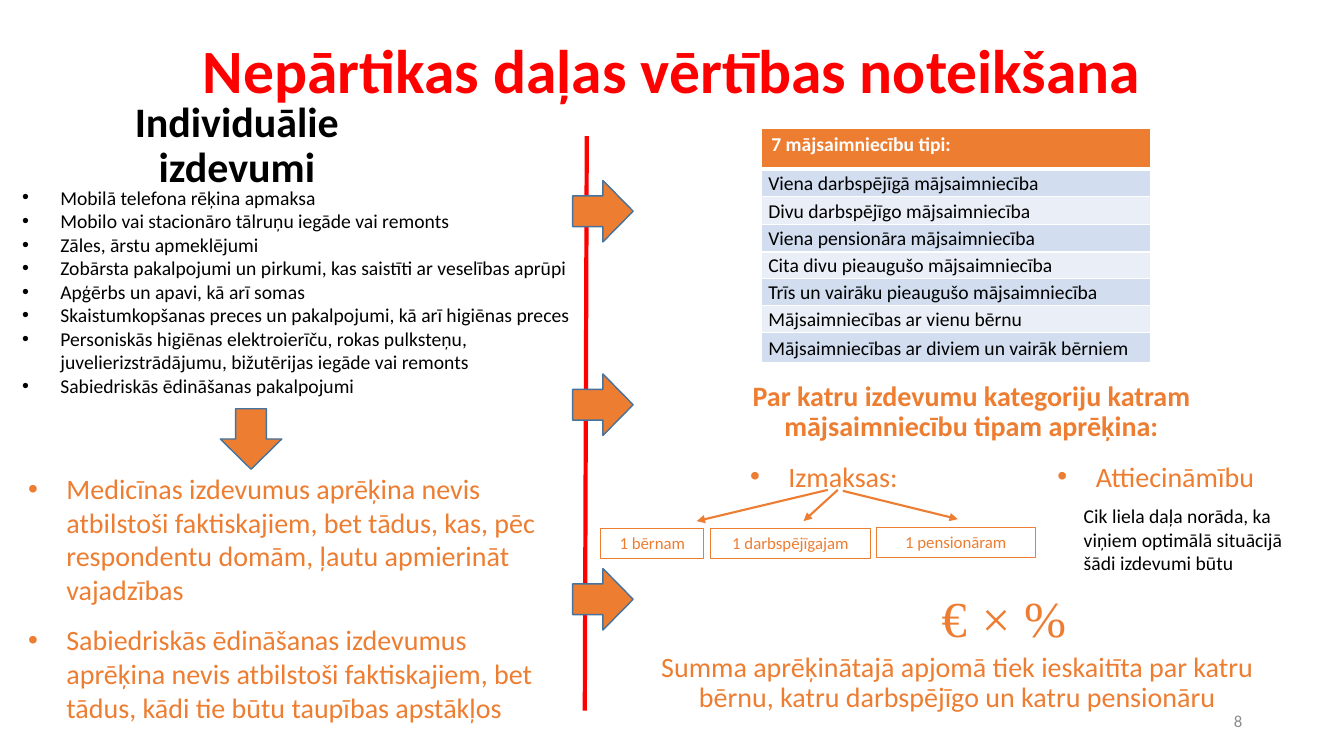
from pptx import Presentation
from pptx.dml.color import RGBColor as RGB
from pptx.enum.shapes import MSO_CONNECTOR as CONN, MSO_SHAPE as SHAPE
from pptx.enum.text import MSO_ANCHOR as ANCHOR, PP_ALIGN as ALIGN
from pptx.oxml.ns import qn
from pptx.util import Pt
from lxml.etree import SubElement as Sub

PX = 9144
HUES = {
    "red": "FF0000", "black": "000000", "white": "FFFFFF", "gray": "8C8C8C",
    "orange": "ED7D31", "edge": "43739E", "dark": "D2DEEF", "light": "EAEFF7",
}
COSTS = [
    "Mobilā telefona rēķina apmaksa",
    "Mobilo vai stacionāro tālruņu iegāde vai remonts",
    "Zāles, ārstu apmeklējumi",
    "Zobārsta pakalpojumi un pirkumi, kas saistīti ar veselības aprūpi",
    "Apģērbs un apavi, kā arī somas",
    "Skaistumkopšanas preces un pakalpojumi, kā arī higiēnas preces",
    "Personiskās higiēnas elektroierīču, rokas pulksteņu, "
    "juvelierizstrādājumu, bižutērijas iegāde vai remonts",
    "Sabiedriskās ēdināšanas pakalpojumi",
]
RULES = [
    "Medicīnas izdevumus aprēķina nevis atbilstoši faktiskajiem, bet tādus, "
    "kas, pēc respondentu domām, ļautu apmierināt vajadzības",
    "Sabiedriskās ēdināšanas izdevumus aprēķina nevis atbilstoši faktiskajiem, "
    "bet tādus, kādi tie būtu taupības apstākļos",
]
TYPES = [
    ("7 mājsaimniecību tipi:", 41),
    ("Viena darbspējīgā mājsaimniecība", 27),
    ("Divu darbspējīgo mājsaimniecība", 28),
    ("Viena pensionāra mājsaimniecība", 27),
    ("Cita divu pieaugušo mājsaimniecība", 26),
    ("Trīs un vairāku pieaugušo mājsaimniecība", 27),
    ("Mājsaimniecības ar vienu bērnu", 27),
    ("Mājsaimniecības ar diviem un vairāk bērniem", 30),
]


def emu(*spans):
    """Turn px lengths into EMU."""
    return [span * PX for span in spans]


def hue(name):
    """Look up a colour by name."""
    return RGB.from_string(HUES[name])


def style(para, size, tint, bold=False, face="Calibri"):
    """Format the runs of a paragraph."""
    for run in para.runs:
        font = run.font
        font.size, font.bold, font.name = Pt(size), bold, face
        font.color.rgb = hue(tint)


def text(slide, box, words, size, tint, bold=False, face="Calibri"):
    """Add a wrapped text box and return its frame."""
    frame = slide.shapes.add_textbox(*emu(*box)).text_frame
    frame.word_wrap = True
    frame.text = words
    for para in frame.paragraphs:
        style(para, size, tint, bold, face)
    return frame


def head(slide, box, words, size, tint, bold=True):
    """Add a centred heading with tight lines."""
    frame = text(slide, box, words, size, tint, bold)
    frame.vertical_anchor = ANCHOR.MIDDLE
    para = frame.paragraphs[0]
    para.alignment, para.line_spacing = ALIGN.CENTER, 0.9


def bullets(slide, box, items, size, tint, gap=0):
    """Add a bulleted list."""
    frame = text(slide, box, "\n".join(items), size, tint)
    for row, para in enumerate(frame.paragraphs):
        para.space_before = Pt(gap if row else 0)
        props = para._p.get_or_add_pPr()
        props.set("marL", str(38 * PX))
        props.set("indent", str(-38 * PX))
        Sub(props, qn("a:buFont"), typeface="Arial")
        Sub(props, qn("a:buChar"), char="•")


def shape(slide, kind, box, edge, width):
    """Add an unfilled outlined shape without shadow."""
    item = slide.shapes.add_shape(kind, *emu(*box))
    item.shadow.inherit = False
    item.fill.background()
    item.line.color.rgb = hue(edge)
    item.line.width = Pt(width)
    return item


def arrow(slide, left, top, turn):
    """Add a turned block arrow."""
    item = shape(slide, SHAPE.LEFT_ARROW, (left, top, 60, 61), "edge", 1)
    item.fill.solid()
    item.fill.fore_color.rgb = hue("orange")
    item.rotation = turn


def label(slide, box, words):
    """Add an outlined label."""
    frame = shape(slide, SHAPE.RECTANGLE, box, "orange", 0.75).text_frame
    frame.word_wrap = True
    frame.text = words
    frame.paragraphs[0].alignment = ALIGN.CENTER
    style(frame.paragraphs[0], 12, "orange")


def line(slide, ends, tint, width, tip=False):
    """Add a straight line, with an arrowhead if asked."""
    item = slide.shapes.add_connector(CONN.STRAIGHT, *emu(*ends))
    item.line.color.rgb = hue(tint)
    item.line.width = Pt(width)
    if tip:
        Sub(item.line._get_or_add_ln(), qn("a:tailEnd"), type="triangle")
    Sub(item._element.spPr, qn("a:effectLst"))


def border(cell, row):
    """Draw white cell borders, thick below the header."""
    props = cell._tc.get_or_add_tcPr()
    thick = {0: "B", 1: "T"}.get(row)
    for spot, side in enumerate("LRTB"):
        width = Pt(3 if side == thick else 1)
        edge = Sub(props, qn("a:ln" + side), w=str(width))
        fill = Sub(edge, qn("a:solidFill"))
        Sub(fill, qn("a:srgbClr"), val=HUES["white"])
        props.insert(spot, edge)


def table(slide, box, rows):
    """Add the table of household types."""
    grid = slide.shapes.add_table(len(rows), 1, *emu(*box)).table
    for row, (words, high) in enumerate(rows):
        grid.rows[row].height = high * PX
        cell = grid.cell(row, 0)
        cell.text = words
        para = cell.text_frame.paragraphs[0]
        if row:
            cell.vertical_anchor = ANCHOR.MIDDLE
            cell.margin_left = cell.margin_right = 7 * PX
            cell.margin_top = cell.margin_bottom = 0
            para.line_spacing = 1.07
        style(para, 14, "black" if row else "white", not row)
        back = ("dark" if row % 2 else "light") if row else "orange"
        cell.fill.solid()
        cell.fill.fore_color.rgb = hue(back)
        border(cell, row)


def main():
    """Build the slide."""
    deck = Presentation()
    deck.slide_width, deck.slide_height = emu(1333, 750)
    slide = deck.slides.add_slide(deck.slide_layouts[6])

    head(slide, (92, 0, 1150, 145), "Nepārtikas daļas vērtības noteikšana", 44, "red")
    page = text(slide, (942, 695, 300, 40), "8", 12, "gray")
    page.vertical_anchor = ANCHOR.MIDDLE
    page.paragraphs[0].alignment = ALIGN.RIGHT

    bullets(slide, (12, 179, 585, 222), COSTS, 14, "black")
    line(slide, (582, 135, 580, 705), "red", 3)
    head(slide, (49, 109, 372, 72), "Individuālie izdevumi", 30, "black")
    for top in (179, 371, 564):
        arrow(slide, 568, top, 180)

    head(slide, (716, 373, 495, 72),
         "Par katru izdevumu kategoriju katram mājsaimniecību tipam aprēķina:", 20, "orange")
    bullets(slide, (734, 451, 191, 44), ["Izmaksas:"], 20, "orange")
    bullets(slide, (1039, 451, 250, 44), ["Attiecināmību"], 20, "orange")
    text(slide, (1065, 495, 225, 81),
         "Cik liela daļa norāda, ka viņiem optimālā situācijā šādi izdevumi būtu", 14, "black")
    for left, sign in ((924, "€"), (964, "×"), (1006, "%")):
        text(slide, (left, 578, 41, 71), sign, 36, "orange", face="Times New Roman")
    head(slide, (636, 642, 627, 72),
         "Summa aprēķinātajā apjomā tiek ieskaitīta par katru bērnu, "
         "katru darbspējīgo un katru pensionāru", 20, "orange", False)

    label(slide, (596, 524, 102, 30), "1 bērnam")
    label(slide, (705, 524, 158, 30), "1 darbspējīgajam")
    label(slide, (869, 523, 158, 30), "1 pensionāram")
    for ends in ((821, 486, 691, 517), (836, 487, 950, 515), (831, 486, 797, 517)):
        line(slide, ends, "orange", 1.5, True)

    table(slide, (755, 127, 386, 233), TYPES)
    bullets(slide, (18, 463, 542, 263), RULES, 20, "orange", 12)
    arrow(slide, 219, 405, 270)
    deck.save("out.pptx")


if __name__ == "__main__":
    main()
